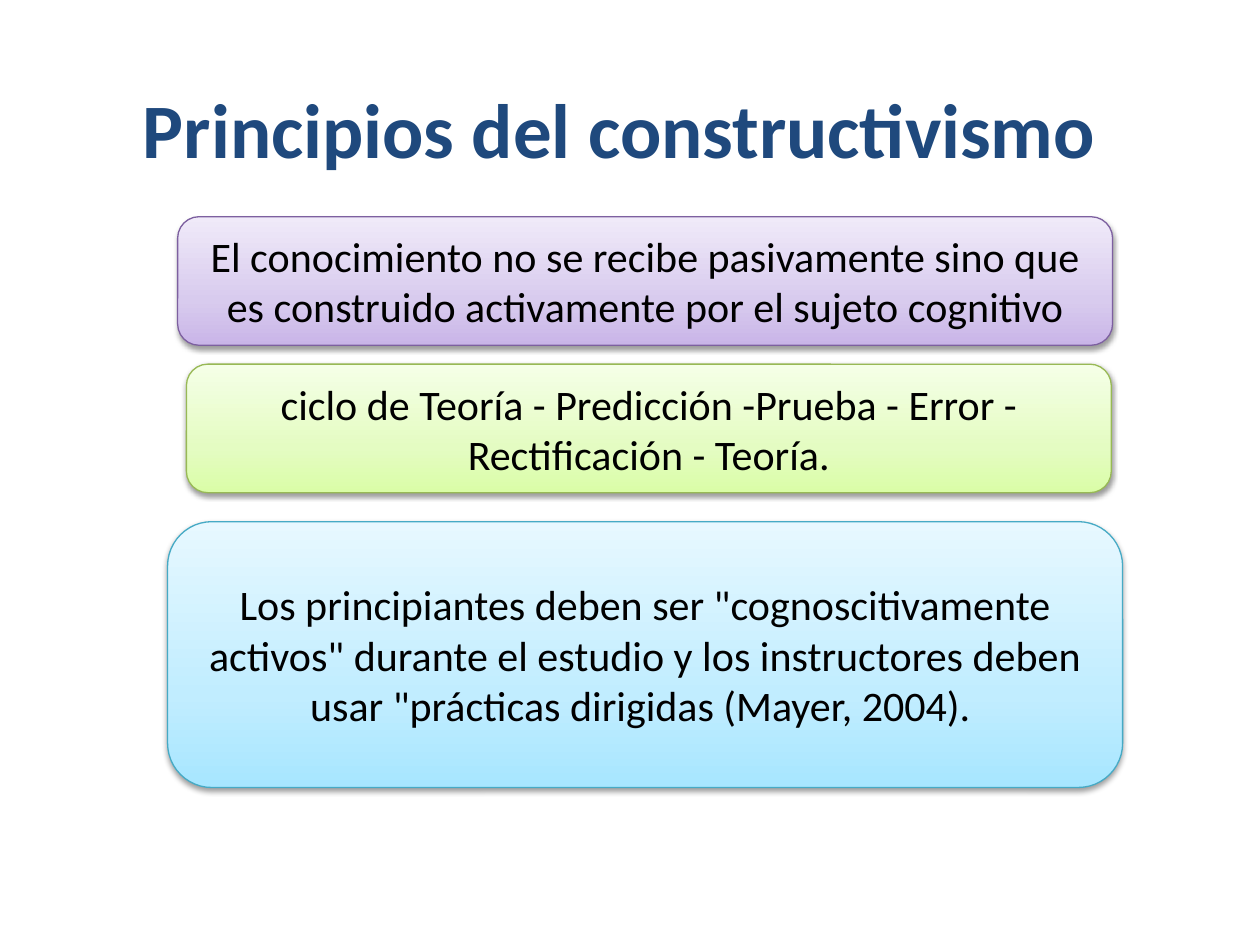
"""Build a slide on the principles of constructivism with three gradient boxes."""
from copy import deepcopy

from lxml import etree
from pptx import Presentation
from pptx.dml.color import RGBColor
from pptx.enum.shapes import MSO_SHAPE
from pptx.enum.text import MSO_ANCHOR, PP_ALIGN
from pptx.oxml.ns import qn
from pptx.util import Inches, Pt

ROUNDED = MSO_SHAPE.ROUNDED_RECTANGLE
MIDDLE = MSO_ANCHOR.MIDDLE
CENTER = PP_ALIGN.CENTER

NAVY = RGBColor(0x1F, 0x49, 0x7D)
BLACK = RGBColor(0x00, 0x00, 0x00)
PURPLE_LINE = RGBColor(0x7D, 0x60, 0xA0)
PURPLES = (RGBColor(0xC9, 0xB5, 0xE8), RGBColor(0xD8, 0xCB, 0xEE), RGBColor(0xF0, 0xEA, 0xF9))
GREEN_LINE = RGBColor(0x98, 0xB9, 0x55)
GREENS = (RGBColor(0xDA, 0xFD, 0xA7), RGBColor(0xE4, 0xFC, 0xC2), RGBColor(0xF5, 0xFF, 0xE7))
BLUE_LINE = RGBColor(0x46, 0xAA, 0xC5)
BLUES = (RGBColor(0xA7, 0xE6, 0xFF), RGBColor(0xC1, 0xED, 0xFF), RGBColor(0xE7, 0xF8, 0xFF))
STOPS = (0, 0.35, 1)


def write(sp, text, size=24, color=BLACK, bold=False):
    tf = sp.text_frame
    tf.word_wrap = True
    tf.vertical_anchor = MIDDLE
    p = tf.paragraphs[0]
    p.alignment = CENTER
    r = p.add_run()
    r.text = text
    r.font.name = "Calibri"
    r.font.size = Pt(size)
    r.font.bold = bold
    r.font.color.rgb = color


def add_shadow(sp):
    sp.shadow.inherit = False
    effects = sp._element.spPr.find(qn("a:effectLst"))
    shadow = etree.SubElement(effects, qn("a:outerShdw"), blurRad=str(Pt(3.1)),
                              dist=str(Pt(1.6)), dir="5400000", rotWithShape="0")
    color = etree.SubElement(shadow, qn("a:srgbClr"), val="000000")
    etree.SubElement(color, qn("a:alpha"), val="38000")


prs = Presentation()
prs.slide_width = Inches(10)
prs.slide_height = Inches(7.5)
s = prs.slides.add_slide(prs.slide_layouts[5])

title = s.shapes.title
title.left, title.top = Inches(0.23), Inches(0.39)
title.width, title.height = Inches(9.38), Inches(1.25)
write(title, "Principios del constructivismo", size=44, color=NAVY, bold=True)

boxes = [
    (1.41, 1.72, 7.42, 1.02, PURPLES, PURPLE_LINE,
     "El conocimiento no se recibe pasivamente sino que es construido "
     "activamente por el sujeto cognitivo"),
    (1.48, 2.89, 7.34, 1.02, GREENS, GREEN_LINE,
     "ciclo de Teoría - Predicción -Prueba - Error - Rectificación - Teoría."),
    (1.33, 4.14, 7.58, 2.11, BLUES, BLUE_LINE,
     'Los principiantes deben ser "cognoscitivamente activos" durante el estudio '
     'y los instructores deben usar "prácticas dirigidas (Mayer, 2004). '),
]

for left, top, width, height, colors, line, text in boxes:
    sp = s.shapes.add_shape(ROUNDED, Inches(left), Inches(top), Inches(width), Inches(height))
    sp.fill.gradient()
    sp.fill.gradient_angle = 90
    stop_list = sp._element.spPr.find(qn("a:gradFill")).find(qn("a:gsLst"))
    stop_list.append(deepcopy(stop_list[-1]))
    for stop, position, color in zip(sp.fill.gradient_stops, STOPS, colors):
        stop.position = position
        stop.color.rgb = color
    sp.line.color.rgb = line
    sp.line.width = Pt(0.75)
    add_shadow(sp)
    write(sp, text)

prs.save("out.pptx")
